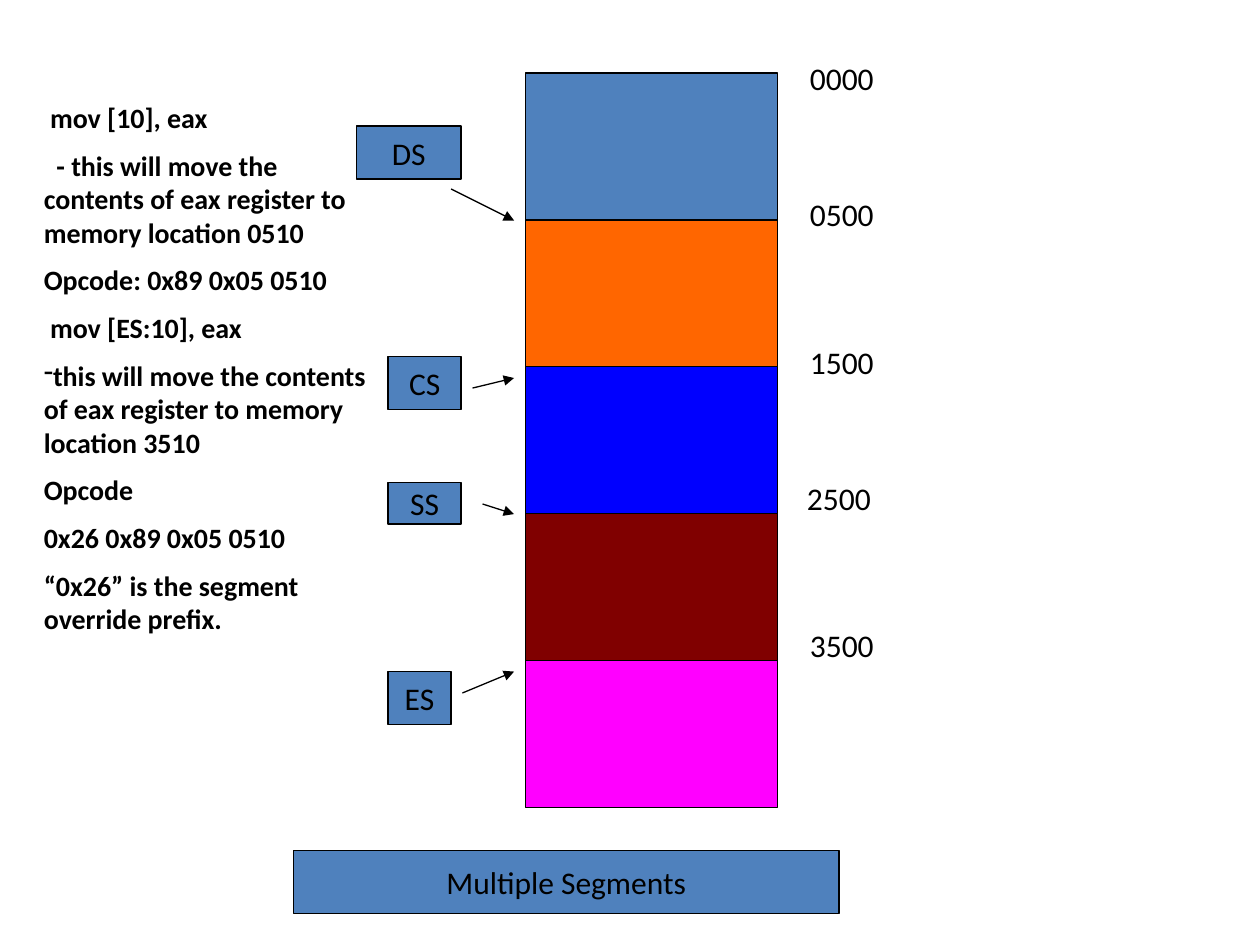
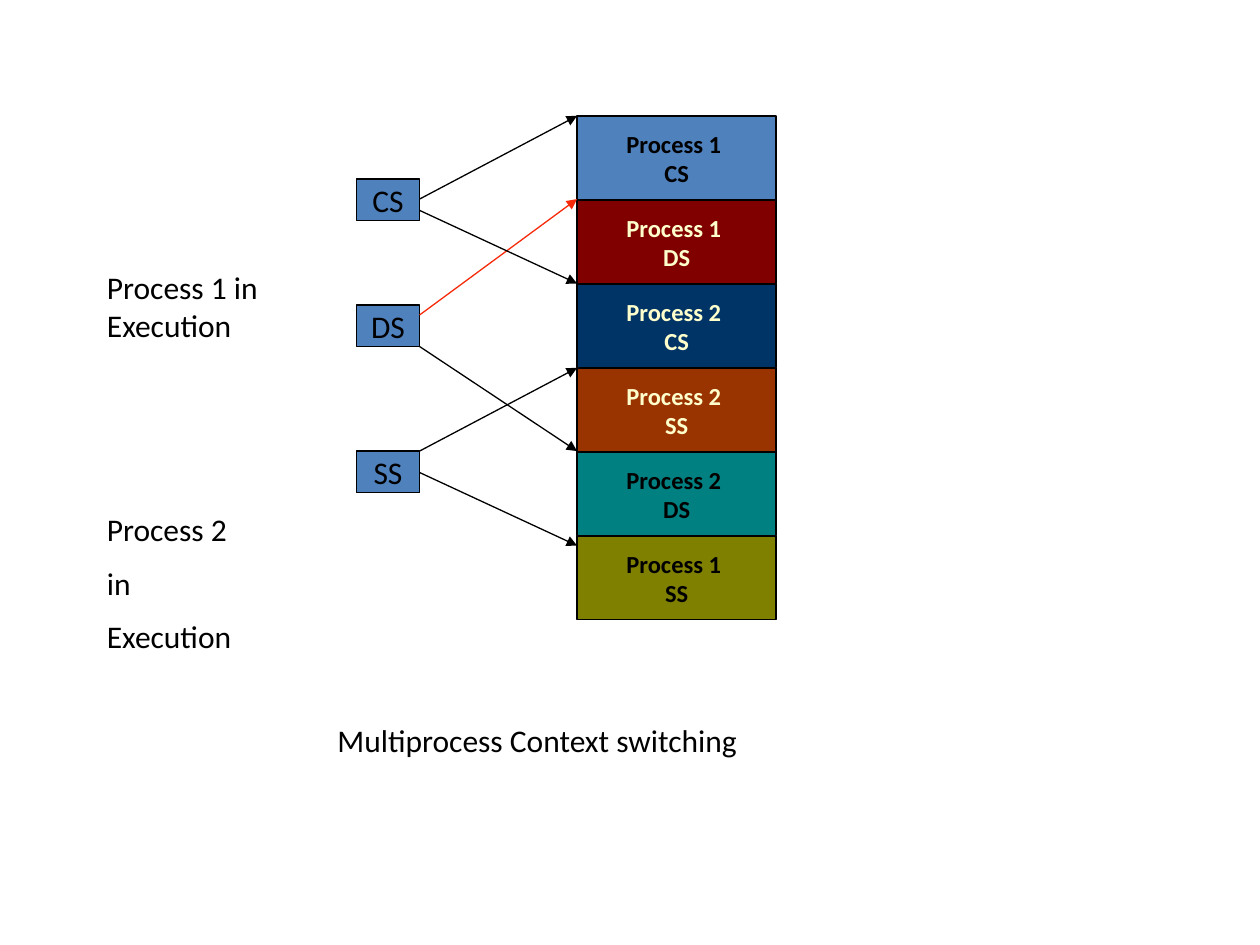
"""Build two slides on memory segments and process context switching."""
from dataclasses import dataclass

from lxml import etree
from pptx import Presentation
from pptx import util as u
from pptx.dml.color import RGBColor
from pptx.enum import shapes, text
from pptx.oxml.ns import qn


@dataclass(frozen=True)
class Theme:
    """Colours, font and sizes shared by the slides."""
    font: str = "Calibri"
    black: str = "000000"
    cream: str = "FFFFCC"
    blue: str = "4F81BD"
    red: str = "F62A08"
    body: int = 18
    note: int = 16
    band: int = 14
    line: float = 0.75


THEME = Theme()

SEGMENT_STACK = (4.17, 0.58, 2, 5.83)
SEGMENT_BANDS = [
    (THEME.blue, THEME.black, []),
    ("FF6600", THEME.black, []),
    ("0000FF", THEME.black, []),
    ("800000", THEME.black, []),
    ("FF00FF", THEME.black, []),
]
SEGMENT_REGISTERS = [
    ("DS", (2.83, 1, 0.83, 0.42)),
    ("CS", (3.08, 2.83, 0.58, 0.42)),
    ("SS", (3.08, 3.83, 0.58, 0.33)),
    ("ES", (3.08, 5.33, 0.5, 0.42)),
    ("Multiple Segments", (2.33, 6.75, 4.33, 0.5)),
]
SEGMENT_ARROWS = [
    ((3.58, 1.5), (4.08, 1.75), THEME.black),
    ((3.75, 3.08), (4.08, 3), THEME.black),
    ((3.83, 4), (4.08, 4.08), THEME.black),
    ((3.67, 5.5), (4.08, 5.33), THEME.black),
]
ADDRESSES = [
    ("0000", 6.33, 0.42),
    ("0500", 6.33, 1.5),
    ("1500", 6.33, 2.67),
    (" 2500", 6.25, 3.75),
    ("3500", 6.33, 4.92),
]
NOTES_AREA = (0.25, 0.75, 2.83, 4.51)
NOTES = [
    " mov [10], eax",
    "  - this will move the contents of eax register to memory location 0510",
    "Opcode: 0x89 0x05 0510",
    " mov [ES:10], eax",
    "this will move the contents of eax register to memory location 3510",
    "Opcode",
    "0x26 0x89 0x05 0510",
    "“0x26” is the segment override prefix.",
]
DASHED_NOTE = 4

PROCESS_STACK = (4.58, 0.92, 1.58, 4)
PROCESS_BANDS = [
    (THEME.blue, THEME.black, ["Process 1 ", "CS"]),
    ("800000", THEME.cream, ["Process 1 ", "DS"]),
    ("003366", THEME.cream, ["Process 2 ", "CS"]),
    ("993300", THEME.cream, ["Process 2 ", "SS"]),
    ("008080", THEME.black, ["Process 2 ", "DS"]),
    ("808000", THEME.black, ["Process 1 ", "SS"]),
]
PROCESS_REGISTERS = [
    ("CS", (2.83, 1.42, 0.5, 0.33)),
    ("DS", (2.83, 2.42, 0.5, 0.33)),
    ("SS", (2.83, 3.58, 0.5, 0.33)),
]
PROCESS_ARROWS = [
    ((3.33, 1.58), (4.58, 0.92), THEME.black),
    ((3.33, 3.75), (4.58, 4.33), THEME.black),
    ((3.33, 2.5), (4.58, 1.58), THEME.red),
    ((3.33, 1.67), (4.58, 2.25), THEME.black),
    ((3.33, 2.75), (4.58, 3.58), THEME.black),
    ((3.33, 3.58), (4.58, 2.92), THEME.black),
]
PROCESS_LABELS = [
    (["Process 1 in Execution"], (0.75, 2.08, 1.58, 1.3)),
    (["Process 2", "in", "Execution"], (0.75, 4, 1.67, 1.7)),
    (["Multiprocess Context switching"], (2.58, 5.67, 5.33, 0.5)),
]


def inches(values):
    """Convert numbers to lengths."""
    return [u.Inches(value) for value in values]


def write(frame, lines, size=THEME.body, color=THEME.black, bold=False,
          align=text.PP_ALIGN.LEFT, before=0.0):
    """Fill a text frame with one paragraph per line."""
    for index, line in enumerate(lines):
        para = frame.paragraphs[0] if index == 0 else frame.add_paragraph()
        para.alignment = align
        para.space_before = u.Pt(size * before)
        span = para.add_run()
        span.text = line
        span.font.name = THEME.font
        span.font.size = u.Pt(size)
        span.font.bold = bold
        span.font.color.rgb = RGBColor.from_string(color)


def add_label(slide, lines, area, **style):
    """Add a wrapping text box with half-line paragraph gaps."""
    frame = slide.shapes.add_textbox(*inches(area)).text_frame
    frame.word_wrap = True
    write(frame, lines, before=0.5, **style)
    return frame


def add_box(slide, lines, area, fill=THEME.blue, **style):
    """Add an outlined rectangle with centred text."""
    box = slide.shapes.add_shape(shapes.MSO_SHAPE.RECTANGLE, *inches(area))
    box.shadow.inherit = False
    box.fill.solid()
    box.fill.fore_color.rgb = RGBColor.from_string(fill)
    box.line.color.rgb = RGBColor.from_string(THEME.black)
    box.line.width = u.Pt(THEME.line)
    box.text_frame.word_wrap = False
    box.text_frame.vertical_anchor = text.MSO_ANCHOR.MIDDLE
    write(box.text_frame, lines, align=text.PP_ALIGN.CENTER, **style)


def add_arrow(slide, start, end, color):
    """Add a straight line with a triangle at its end."""
    arrow = slide.shapes.add_connector(
        shapes.MSO_CONNECTOR.STRAIGHT, *inches(start + end))
    arrow.line.color.rgb = RGBColor.from_string(color)
    arrow.line.width = u.Pt(THEME.line)
    outline = arrow.line._get_or_add_ln()
    etree.SubElement(outline, qn("a:tailEnd"), type="triangle")
    etree.SubElement(arrow._element.spPr, qn("a:effectLst"))


def add_memory(deck, stack, bands, registers, arrows):
    """Add a slide with a memory stack, register boxes and arrows."""
    slide = deck.slides.add_slide(deck.slide_layouts[6])
    left, top, width, total = stack
    height = total / len(bands)
    for index, (fill, color, lines) in enumerate(bands):
        area = (left, top + index * height, width, height)
        add_box(slide, lines, area, fill, size=THEME.band, color=color, bold=True)
    for name, area in registers:
        add_box(slide, [name], area)
    for start, end, color in arrows:
        add_arrow(slide, start, end, color)
    return slide


def main():
    """Build and save the deck."""
    deck = Presentation()
    deck.slide_width, deck.slide_height = inches((10, 7.5))

    segments = add_memory(deck, SEGMENT_STACK, SEGMENT_BANDS,
                          SEGMENT_REGISTERS, SEGMENT_ARROWS)
    for address, left, top in ADDRESSES:
        add_label(segments, [address], (left, top, 1.17, 0.5))
    notes = add_label(segments, NOTES, NOTES_AREA, size=THEME.note, bold=True)
    dashed = notes.paragraphs[DASHED_NOTE]._p.get_or_add_pPr()
    etree.SubElement(dashed, qn("a:buFontTx"))
    etree.SubElement(dashed, qn("a:buChar"), char="-")

    processes = add_memory(deck, PROCESS_STACK, PROCESS_BANDS,
                           PROCESS_REGISTERS, PROCESS_ARROWS)
    for lines, area in PROCESS_LABELS:
        add_label(processes, lines, area)

    deck.save("out.pptx")


if __name__ == "__main__":
    main()
